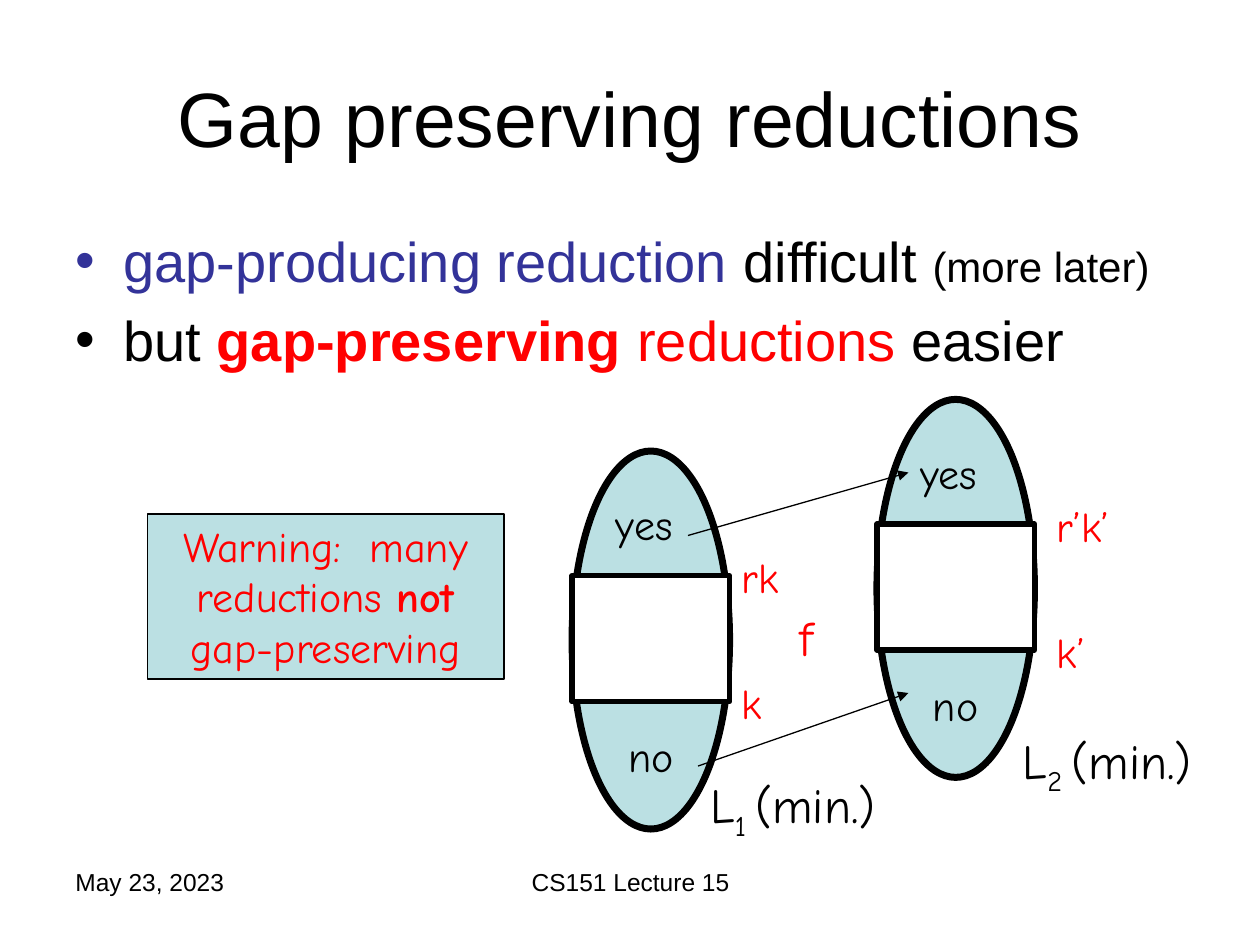
"""Build the slide on gap preserving reductions."""
from lxml.etree import SubElement
from pptx import Presentation
from pptx.dml.color import RGBColor
from pptx.enum.shapes import MSO_CONNECTOR, MSO_SHAPE
from pptx.enum.text import MSO_ANCHOR, PP_ALIGN
from pptx.oxml.ns import qn
from pptx.util import Inches, Pt

HUES = {"black": "000000", "white": "FFFFFF", "red": "FF0000",
        "blue": "333399", "teal": "BBE0E3"}
HAND = "Comic Neue"
MID = PP_ALIGN.CENTER

deck = Presentation()
deck.slide_width, deck.slide_height = Inches(10), Inches(7.5)
slide = deck.slides.add_slide(deck.slide_layouts[6])
shapes = slide.shapes


def write(par, runs, size, face=HAND, hue="black", align=PP_ALIGN.LEFT, gap=0):
    par.alignment = align
    par.font.size, par.font.name = Pt(size), face
    par.font.color.rgb = RGBColor.from_string(HUES[hue])
    if gap:
        space = SubElement(par._p.get_or_add_pPr(), qn("a:spcBef"))
        SubElement(space, qn("a:spcPct")).set("val", str(gap * 1000))
    for text, look in runs:
        run = par.add_run()
        run.text = text
        if "hue" in look:
            run.font.color.rgb = RGBColor.from_string(HUES[look["hue"]])
        if "size" in look:
            run.font.size = Pt(look["size"])
        if "bold" in look:
            run.font.bold = True
        if "base" in look:
            run.font._element.set("baseline", str(look["base"] * 1000))


def block(kind, place, fill=None, width=0):
    spot = [Inches(n) for n in place]
    if kind is None:
        item = shapes.add_textbox(*spot)
    else:
        item = shapes.add_shape(kind, *spot)
        item.shadow.inherit = False
        item.fill.solid()
        item.fill.fore_color.rgb = RGBColor.from_string(HUES[fill])
        item.line.color.rgb = RGBColor.from_string(HUES["black"])
        item.line.width = Pt(width)
    item.text_frame.word_wrap = True
    item.text_frame.vertical_anchor = MSO_ANCHOR.TOP
    return item.text_frame


title = block(None, (0.5, 0.3, 9, 1.25))
title.vertical_anchor = MSO_ANCHOR.MIDDLE
write(title.paragraphs[0], [("Gap preserving reductions", {})], 44, "Arial", align=MID)

body = block(None, (0.5, 1.75, 9, 1.5))
points = [
    ("blue", [("gap-producing reduction", {}), (" difficult ", {"hue": "black"}),
              ("(more later)", {"hue": "black", "size": 24})]),
    ("black", [("but ", {}), ("gap-preserving", {"hue": "red", "bold": True}),
               (" reductions", {"hue": "red"}), (" easier", {})]),
]
for i, (hue, runs) in enumerate(points):
    par = body.add_paragraph() if i else body.paragraphs[0]
    write(par, runs, 32, "Arial", hue, gap=20)
    props = par._p.get_or_add_pPr()
    props.set("marL", str(Inches(0.38)))
    props.set("indent", str(-Inches(0.38)))
    if hue != "black":
        tint = SubElement(props, qn("a:buClr"))
        SubElement(tint, qn("a:srgbClr")).set("val", HUES[hue])
    SubElement(props, qn("a:buFont")).set("typeface", "Arial")
    SubElement(props, qn("a:buChar")).set("char", "•")
    props.append(props.find(qn("a:defRPr")))

note = block(MSO_SHAPE.RECTANGLE, (1.17, 4.08, 2.83, 1.31), "teal", 0.75)
write(note.paragraphs[0], [("Warning:  many reductions ", {}), ("not", {"bold": True}),
                           (" gap-preserving", {})], 24, hue="red", align=MID, gap=20)

for left, top in [(4.54, 3.58), (6.96, 3.17)]:
    block(MSO_SHAPE.OVAL, (left, top, 1.25, 3), "teal", 4)
    block(MSO_SHAPE.RECTANGLE, (left, top + 0.99, 1.25, 1), "white", 3)
    for text, drop, align in [("yes", 0.33, PP_ALIGN.LEFT), ("no", 2.17, MID)]:
        frame = block(None, (left + 0.25, top + drop, 0.75, 0.5))
        write(frame.paragraphs[0], [(text, {})], 24, align=align, gap=50)

marks = [("f", 6.25, 4.77, 28), ("k", 5.79, 5.33, 24), ("rk", 5.79, 4.33, 24),
         ("k’", 8.29, 4.92, 24), ("r’k’", 8.29, 3.92, 24)]
for text, left, top, size in marks:
    frame = block(None, (left, top, 0.96, 0.5))
    write(frame.paragraphs[0], [(text, {})], size, hue="red", gap=50)

for ends in [(5.54, 6.08, 7.21, 5.5), (5.46, 4.25, 7.21, 3.75)]:
    arrow = shapes.add_connector(MSO_CONNECTOR.STRAIGHT, *[Inches(n) for n in ends])
    arrow.line.color.rgb = RGBColor.from_string(HUES["black"])
    arrow.line.width = Pt(0.75)
    SubElement(arrow.line._get_or_add_ln(), qn("a:tailEnd")).set("type", "triangle")
    SubElement(arrow._element.spPr, qn("a:effectLst"))

for sub, left, top, width in [("1 ", 5.54, 6.1, 1.61), ("2 ", 8.02, 5.75, 1.65)]:
    frame = block(None, (left, top, width, 0.57))
    frame.word_wrap = False
    write(frame.paragraphs[0], [("L", {}), (sub, {"base": -25}), ("(min.)", {})], 28, gap=50)

feet = [("May 23, 2023", 0.5, 2.33, PP_ALIGN.LEFT), ("CS151 Lecture 15", 3.42, 3.17, MID)]
for text, left, width, align in feet:
    frame = block(None, (left, 6.83, width, 0.52))
    write(frame.paragraphs[0], [(text, {})], 14, "Arial", align=align)

deck.save("out.pptx")
